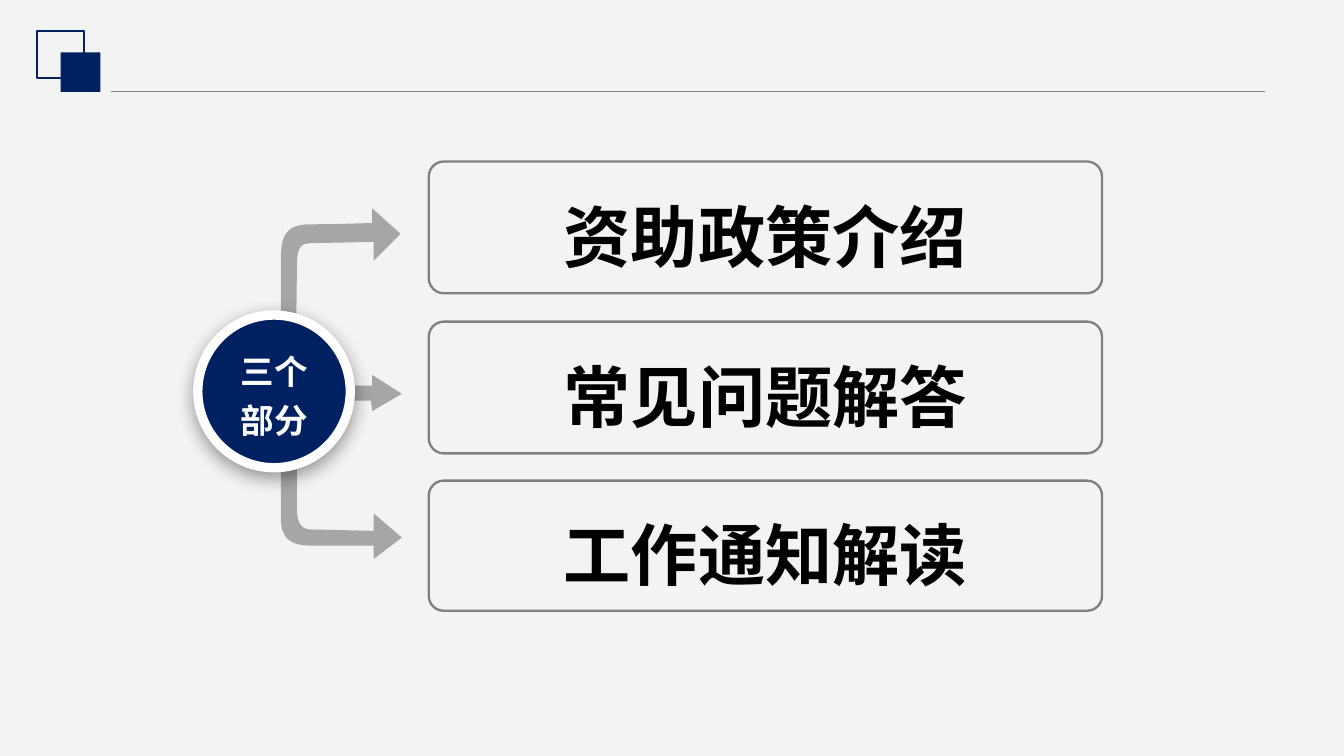
from dataclasses import dataclass

import lxml.etree
import pptx
import pptx.dml.color
import pptx.enum.shapes
import pptx.enum.text
import pptx.oxml
import pptx.oxml.ns
import pptx.util

Pt = pptx.util.Pt
qn = pptx.oxml.ns.qn
SHAPE = pptx.enum.shapes.MSO_SHAPE
FONT = "Noto Sans CJK SC"
COLORS = {
    "background": "F3F3F3",
    "navy": "002161",
    "line": "808080",
    "arrow": "A6A6A6",
    "text": "000000",
    "white": "FFFFFF",
}


@dataclass
class Box:
    left: float
    top: float
    width: float
    height: float


@dataclass
class Topic:
    text: str
    top: float
    height: float


@dataclass
class Curve:
    c1: tuple[float, float]
    c2: tuple[float, float]
    end: tuple[float, float]


@dataclass
class Arrow:
    start: tuple[float, float]
    steps: list[tuple[float, float] | Curve]


TOPICS = [
    Topic("资助政策介绍", 86.5, 70.6),
    Topic("常见问题解答", 172.3, 70.6),
    Topic("工作通知解读", 257.5, 69.7),
]

ARROWS = [
    Arrow((159.1, 220.3), [
        (159.1, 273.6),
        Curve((159.8, 283.7), (163.4, 283.7), (169.2, 283.7)),
        (200.2, 284.4), (200.2, 275), (215.3, 288), (200.2, 299.5), (200.2, 292.3),
        Curve((200.2, 292.3), (178.6, 292.3), (167, 292.3)),
        Curve((154.8, 292.3), (150.5, 288), (150.5, 277.2)),
        (150.5, 219.6),
        Curve((151.9, 209.5), (157, 211), (159.1, 220.3)),
    ]),
    Arrow((139, 215.3), [
        (198.7, 214.6), (199.4, 220.3), (215.3, 211),
        (199.4, 200.9), (199.4, 206.6), (139, 207.4), (139, 215.3),
    ]),
    Arrow((158.4, 203.8), [
        (159.1, 141.8),
        Curve((159.1, 130.3), (162.7, 130.3), (168.5, 130.3)),
        (200.2, 129.6), (200.2, 139.7), (214.6, 125.3), (199.4, 111.6), (199.4, 119.5),
        Curve((199.4, 119.5), (178.6, 120.2), (166.3, 120.2)),
        Curve((154.1, 120.2), (150.5, 125.3), (150.5, 138.2)),
        (150.5, 205.2),
        Curve((151.9, 216), (157, 214.6), (158.4, 203.8)),
    ]),
]


def rgb(name: str) -> pptx.dml.color.RGBColor:
    return pptx.dml.color.RGBColor.from_string(COLORS[name])


def style(sp, fill: str | None = None, line: str | None = None, width: float = 1) -> None:
    sp.shadow.inherit = False
    if fill:
        sp.fill.solid()
        sp.fill.fore_color.rgb = rgb(fill)
    else:
        sp.fill.background()
    if line:
        sp.line.color.rgb = rgb(line)
        sp.line.width = Pt(width)
    else:
        sp.line.fill.background()


def add_shape(s, kind, box: Box, fill: str | None = None,
              line: str | None = None, width: float = 1):
    sp = s.shapes.add_shape(kind, Pt(box.left), Pt(box.top), Pt(box.width), Pt(box.height))
    style(sp, fill, line, width)
    return sp


def add_text(sp, text: str, size: float, color: str) -> None:
    tf = sp.text_frame
    tf.word_wrap = True
    tf.vertical_anchor = pptx.enum.text.MSO_ANCHOR.MIDDLE
    tf.margin_left = tf.margin_right = Pt(5)
    tf.margin_top = tf.margin_bottom = Pt(2.5)
    p = tf.paragraphs[0]
    p.alignment = pptx.enum.text.PP_ALIGN.CENTER
    p.line_spacing = 1.2
    r = p.add_run()
    r.text = text
    r.font.size = Pt(size)
    r.font.bold = True
    r.font.name = FONT
    r.font.color.rgb = rgb(color)
    ea = lxml.etree.SubElement(r.font._element, qn("a:ea"))
    ea.set("typeface", FONT)


def add_arrow(s, arrow: Arrow) -> None:
    ends = [step.end if isinstance(step, Curve) else step for step in arrow.steps]
    scaled = [(round(x * 100), round(y * 100)) for x, y in [arrow.start, *ends]]
    builder = s.shapes.build_freeform(*scaled[0], scale=Pt(0.01))
    builder.add_line_segments(scaled[1:], close=True)
    sp = builder.convert_to_shape()
    style(sp, "arrow")

    left, top = (min(values) for values in zip(*scaled))
    segments = list(sp._element.iter(qn("a:lnTo")))
    for segment, step in zip(segments, arrow.steps):
        if isinstance(step, Curve):
            bezier = lxml.etree.Element(qn("a:cubicBezTo"))
            for x, y in (step.c1, step.c2, step.end):
                pt = lxml.etree.SubElement(bezier, qn("a:pt"))
                pt.set("x", str(round(x * 100) - left))
                pt.set("y", str(round(y * 100) - top))
            segment.getparent().replace(segment, bezier)


def add_rule(s, x1: float, x2: float, y: float) -> None:
    rule = s.shapes.add_connector(
        pptx.enum.shapes.MSO_CONNECTOR.STRAIGHT, Pt(x1), Pt(y), Pt(x2), Pt(y))
    rule.line.color.rgb = rgb("line")
    rule.line.width = Pt(0.75)
    lxml.etree.SubElement(rule._element.spPr, qn("a:effectLst"))


def add_shadow(sp) -> None:
    effects = sp._element.spPr.find(qn("a:effectLst"))
    effects.append(pptx.oxml.parse_xml(
        f'<a:outerShdw {pptx.oxml.ns.nsdecls("a")} blurRad="{Pt(10)}" dist="{Pt(3)}" '
        'dir="5400000" algn="t" rotWithShape="0"><a:srgbClr val="000000">'
        '<a:alpha val="40000"/></a:srgbClr></a:outerShdw>'))


def main() -> None:
    prs = pptx.Presentation()
    prs.slide_width, prs.slide_height = Pt(720), Pt(405)
    s = prs.slides.add_slide(prs.slide_layouts[6])
    s.background.fill.solid()
    s.background.fill.fore_color.rgb = rgb("background")

    add_rule(s, 59.5, 677.5, 49)
    add_shape(s, SHAPE.RECTANGLE, Box(20, 16.4, 25.2, 25.2), line="navy")
    add_shape(s, SHAPE.RECTANGLE, Box(32.5, 28, 21.3, 21.3), fill="navy")

    for topic in TOPICS:
        box = Box(229.7, topic.top, 360.7, topic.height)
        sp = add_shape(s, SHAPE.ROUNDED_RECTANGLE, box, line="line", width=1.25)
        sp.adjustments[0] = 0.115
        add_text(sp, topic.text, 36, "text")

    for arrow in ARROWS:
        add_arrow(s, arrow)

    hub = add_shape(s, SHAPE.OVAL, Box(106, 168.8, 81.7, 81.8), "navy", "white", 5)
    add_shadow(hub)
    add_text(hub, "三个部分", 18, "white")

    prs.save("out.pptx")


if __name__ == "__main__":
    main()
